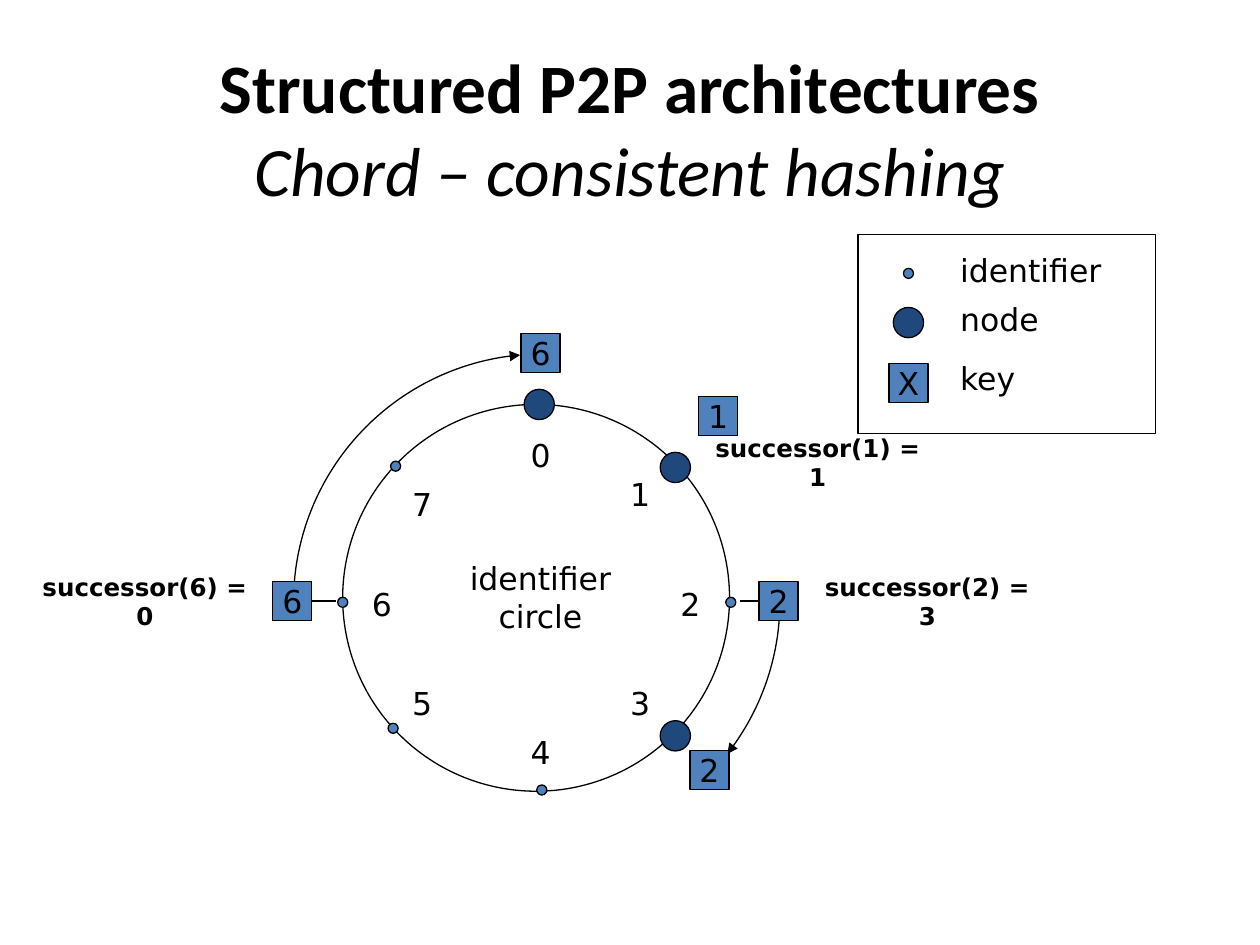
import math

import pptx
import pptx.dml.color
import pptx.enum.dml
import pptx.enum.shapes
import pptx.enum.text
import pptx.oxml.ns
import pptx.util
from lxml import etree
from pptx.util import Inches

SHAPE = pptx.enum.shapes.MSO_SHAPE
ALIGN = pptx.enum.text.PP_ALIGN
ANCHOR = pptx.enum.text.MSO_ANCHOR

THEME = {
    "ink": "000000", "key": "4F81BD", "node": "1F497D",
    "title_font": "Calibri", "body_font": "DejaVu Sans",
    "title_size": 39.6, "body_size": 18, "note_size": 14, "line_width": 0.75,
}
KEY_SIZE, NODE_SIZE, DOT_SIZE = 0.31, 0.24, 0.08

TITLE = [("Structured P2P architectures", {"bold": True}),
         ("Chord – consistent hashing", {"italic": True})]
RING_BOX = (2.72, 3.21, 3.07, 3.07)
# identifier, is it a node, centre of its mark, centre of its label
IDENTIFIERS = [
    ("0", True, (4.28, 3.21), (4.29, 3.61)),
    ("1", True, (5.36, 3.71), (5.08, 3.92)),
    ("2", False, (5.8, 4.78), (5.48, 4.79)),
    ("3", True, (5.36, 5.84), (5.08, 5.58)),
    ("4", False, (4.3, 6.27), (4.29, 5.97)),
    ("5", False, (3.12, 5.78), (3.35, 5.58)),
    ("6", False, (2.72, 4.78), (3.03, 4.79)),
    ("7", False, (3.14, 3.7), (3.35, 4)),
]
# text, centre
PLACED_KEYS = [("6", (4.29, 2.8)), ("1", (5.7, 3.3)), ("2", (5.63, 6.11))]
# text, centre, connection site facing the ring, end of the line at the ring
LINKED_KEYS = [("6", (2.32, 4.77), 3, 2.67), ("2", (6.18, 4.77), 1, 5.87)]
# centre, radius, first and last angle, clockwise from the right
MOVES = [((4.3, 4.78), 1.97, 180, 265), ((4.22, 4.77), 1.97, 0, 38)]
SUCCESSORS = [("successor(1) = 1", (6.49, 3.67)),
              ("successor(2) = 3", (7.36, 4.77)),
              ("successor(6) = 0", (1.15, 4.77))]
LEGEND_BOX = (6.81, 1.86, 2.36, 1.58)
LEGEND_MARK_X, LEGEND_TEXT_LEFT = 7.21, 7.62
# text, centre height of the text, kind of mark, centre height of the mark
LEGEND = [("identifier", 2.14, "dot", 2.17), ("node", 2.53, "node", 2.56),
          ("key", 3, "key", 3.04)]


def color(name):
    return pptx.dml.color.RGBColor.from_string(THEME[name])


def centred_box(centre, width, height):
    return centre[0] - width / 2, centre[1] - height / 2, width, height


def style_line(line):
    line.color.rgb = color("ink")
    line.width = pptx.util.Pt(THEME["line_width"])


def write_text(shape, lines, size="body_size", font="body_font", bold=False, italic=False,
               align=ALIGN.CENTER, anchor=ANCHOR.MIDDLE, wrap=False, margin=0):
    """Write lines as paragraphs; a line is a string or a (string, format) pair."""
    frame = shape.text_frame
    frame.word_wrap = wrap
    frame.vertical_anchor = anchor
    frame.margin_left = frame.margin_right = Inches(margin)
    frame.margin_top = frame.margin_bottom = Inches(margin / 2)
    for index, line in enumerate(lines):
        text, changes = (line, {}) if isinstance(line, str) else line
        paragraph = frame.add_paragraph() if index else frame.paragraphs[0]
        paragraph.alignment = align
        run = paragraph.add_run()
        run.text = text
        run.font.name = THEME[font]
        run.font.size = pptx.util.Pt(THEME[size])
        run.font.bold = changes.get("bold", bold)
        run.font.italic = changes.get("italic", italic)
        run.font.color.rgb = color("ink")


def add_text(slide, box, lines, **text_format):
    shape = slide.shapes.add_textbox(*map(Inches, box))
    write_text(shape, lines, **text_format)


def add_outlined(slide, preset, box, fill=None):
    shape = slide.shapes.add_shape(preset, *map(Inches, box))
    shape.shadow.inherit = False
    if fill:
        shape.fill.solid()
        shape.fill.fore_color.rgb = color(fill)
    else:
        shape.fill.background()
    style_line(shape.line)
    return shape


def add_key(slide, text, centre):
    shape = add_outlined(slide, SHAPE.RECTANGLE, centred_box(centre, KEY_SIZE, KEY_SIZE), "key")
    write_text(shape, [text])
    return shape


def add_mark(slide, centre, is_node):
    size, fill = (NODE_SIZE, "node") if is_node else (DOT_SIZE, "key")
    add_outlined(slide, SHAPE.OVAL, centred_box(centre, size, size), fill)


def add_move(slide, centre, radius, first, last):
    """Draw an open arc with an arrowhead at its last angle."""
    points = [(Inches(centre[0] + radius * math.cos(math.radians(angle))),
               Inches(centre[1] + radius * math.sin(math.radians(angle))))
              for angle in range(first, last + 1)]
    builder = slide.shapes.build_freeform(*points[0])
    builder.add_line_segments(points[1:], close=False)
    shape = builder.convert_to_shape()
    shape.shadow.inherit = False
    shape.fill.background()
    style_line(shape.line)
    outline = shape.element.spPr.find(pptx.oxml.ns.qn("a:ln"))
    etree.SubElement(outline, pptx.oxml.ns.qn("a:tailEnd"), type="triangle")


def add_link(slide, key, site, centre, ring_x):
    key_x = centre[0] + (KEY_SIZE / 2 if site == 3 else -KEY_SIZE / 2)
    connector = slide.shapes.add_connector(
        pptx.enum.shapes.MSO_CONNECTOR.STRAIGHT,
        Inches(key_x), Inches(centre[1]), Inches(ring_x), Inches(centre[1]))
    connector.begin_connect(key, site)
    style_line(connector.line)
    etree.SubElement(connector.element.spPr, pptx.oxml.ns.qn("a:effectLst"))


def add_ring(slide):
    add_outlined(slide, SHAPE.OVAL, RING_BOX)
    for text, is_node, mark_centre, label_centre in IDENTIFIERS:
        add_mark(slide, mark_centre, is_node)
        add_text(slide, centred_box(label_centre, 0.32, 0.31), [text])
    add_text(slide, centred_box((4.29, 4.74), 1.26, 0.71), ["identifier", "circle"])


def add_legend(slide):
    add_outlined(slide, SHAPE.RECTANGLE, LEGEND_BOX)
    for text, text_y, kind, mark_y in LEGEND:
        mark_centre = (LEGEND_MARK_X, mark_y)
        if kind == "key":
            add_key(slide, "X", mark_centre)
        else:
            add_mark(slide, mark_centre, kind == "node")
        add_text(slide, (LEGEND_TEXT_LEFT, text_y - 0.12, 1.26, 0.24), [text],
                 align=ALIGN.LEFT, wrap=True)


def main():
    presentation = pptx.Presentation()
    presentation.slide_width, presentation.slide_height = Inches(10), Inches(7.5)
    slide = presentation.slides.add_slide(presentation.slide_layouts[6])
    add_text(slide, (0.5, 0.3, 9, 1.25), TITLE, size="title_size", font="title_font",
             anchor=ANCHOR.TOP, wrap=True, margin=0.1)
    for move in MOVES:
        add_move(slide, *move)
    add_ring(slide)
    for text, centre in PLACED_KEYS:
        add_key(slide, text, centre)
    for text, centre, site, ring_x in LINKED_KEYS:
        add_link(slide, add_key(slide, text, centre), site, centre, ring_x)
    for text, centre in SUCCESSORS:
        add_text(slide, centred_box(centre, 1.73, 0.31), [text], size="note_size", bold=True)
    add_legend(slide)
    presentation.save("out.pptx")


if __name__ == "__main__":
    main()
